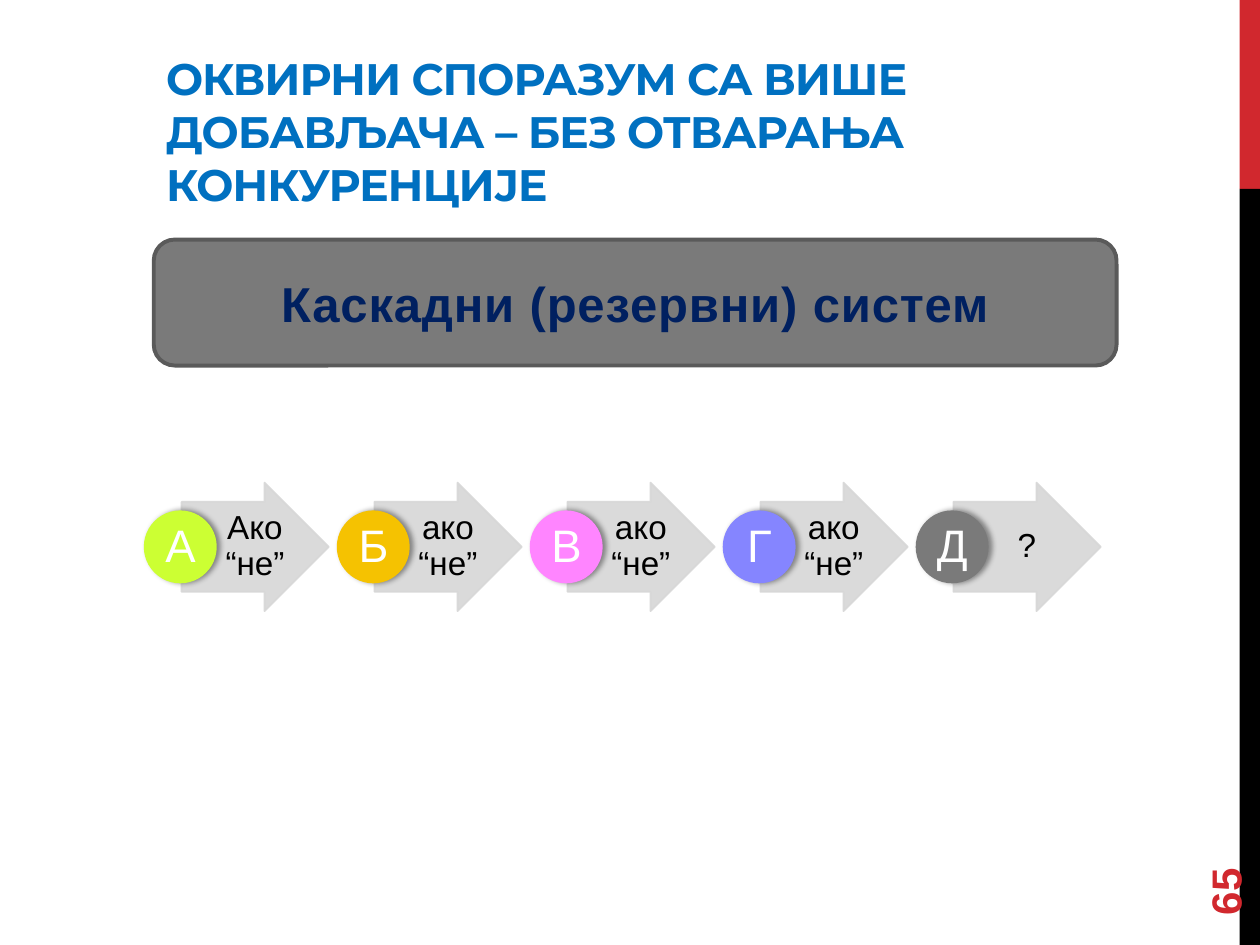
from dataclasses import dataclass
from typing import Optional

from lxml.etree import SubElement
from pptx import Presentation
from pptx.dml.color import RGBColor
from pptx.enum.shapes import MSO_SHAPE as Preset
from pptx.enum.text import MSO_ANCHOR as Anchor, PP_ALIGN as Align
from pptx.oxml.ns import qn
from pptx.util import Cm, Pt


@dataclass(frozen=True)
class Theme:
    red: str = "D1282E"
    black: str = "000000"
    white: str = "FFFFFF"
    blue: str = "0070C0"
    navy: str = "002060"
    gray: str = "7A7A7A"
    dark_gray: str = "5A5A5A"
    arrow: str = "D7D7D7"
    body_font: str = "Arial"
    title_font: str = "Montserrat"
    title_size: float = 25.2
    banner_size: float = 28
    letter_size: float = 26
    page_size: float = 24
    label_size: float = 19


THEME = Theme()


@dataclass(frozen=True)
class Box:
    """Left, top, width and height in centimetres."""
    left: float
    top: float
    width: float
    height: float

    def shifted(self, dx: float) -> "Box":
        return Box(self.left + dx, self.top, self.width, self.height)

    def lengths(self) -> tuple:
        return Cm(self.left), Cm(self.top), Cm(self.width), Cm(self.height)


@dataclass(frozen=True)
class Style:
    size: float
    color: str
    font: str = THEME.body_font
    bold: bool = False
    spacing: float = 0
    align: Align = Align.LEFT
    anchor: Anchor = Anchor.MIDDLE
    line_spacing: float = 1.0
    insets: tuple = (0.25, 0.13, 0.25, 0.13)


@dataclass(frozen=True)
class Supplier:
    letter: str
    color: str
    condition: str


SUPPLIERS = (
    Supplier("A", "CCFF33", "Ако “нe”"),
    Supplier("Б", "F5C201", "ако “не”"),
    Supplier("В", "FF85FF", "ако “не”"),
    Supplier("Г", "8585FF", "ако “не”"),
    Supplier("Д", THEME.gray, "?"),
)
STEP_PITCH = 3.89
ARROW = Box(3.66, 9.73, 2.97, 2.59)
CONDITION = Box(4.39, 10.13, 1.45, 1.8)
CIRCLE = Box(2.9, 10.29, 1.47, 1.47)
LETTER = Box(3.12, 10.52, 1.04, 1.04)

TITLE_STYLE = Style(THEME.title_size, THEME.blue, THEME.title_font, bold=True,
                    spacing=-0.6, anchor=Anchor.TOP)
PAGE_STYLE = Style(THEME.page_size, THEME.red, bold=True)
BANNER_STYLE = Style(THEME.banner_size, THEME.navy, bold=True, spacing=0.5,
                     align=Align.CENTER)
CONDITION_STYLE = Style(THEME.label_size, THEME.black, align=Align.CENTER,
                        line_spacing=0.9, insets=(0.13, 0.03, 0.08, 0.03))
LETTER_STYLE = Style(THEME.letter_size, THEME.white, align=Align.CENTER,
                     line_spacing=0.9, insets=(0.05,) * 4)


def write(shape, text: str, style: Style) -> None:
    frame = shape.text_frame
    frame.word_wrap = True
    frame.vertical_anchor = style.anchor
    (frame.margin_left, frame.margin_top,
     frame.margin_right, frame.margin_bottom) = map(Cm, style.insets)
    paragraph = frame.paragraphs[0]
    paragraph.alignment = style.align
    paragraph.line_spacing = style.line_spacing
    run = paragraph.add_run()
    run.text = text
    run.font.name = style.font
    run.font.size = Pt(style.size)
    run.font.bold = style.bold
    run.font.color.rgb = RGBColor.from_string(style.color)
    if style.spacing:
        run._r.get_or_add_rPr().set("spc", str(round(style.spacing * 100)))


def add_text(shapes, box: Box, text: str, style: Style):
    text_box = shapes.add_textbox(*box.lengths())
    write(text_box, text, style)
    return text_box


def add_solid(shapes, preset: Preset, box: Box, fill: str,
              line: Optional[str] = None, line_width: float = 1):
    shape = shapes.add_shape(preset, *box.lengths())
    shape.shadow.inherit = False
    shape.fill.solid()
    shape.fill.fore_color.rgb = RGBColor.from_string(fill)
    if line:
        shape.line.color.rgb = RGBColor.from_string(line)
        shape.line.width = Pt(line_width)
    else:
        shape.line.fill.background()
    return shape


def add_alpha(color, percent: int) -> None:
    SubElement(color, qn("a:alpha")).set("val", str(percent * 1000))


def add_right_shadow(shape) -> None:
    effects = shape._element.spPr.find(qn("a:effectLst"))
    shadow = SubElement(effects, qn("a:outerShdw"), blurRad=str(Pt(3.1)),
                        dist=str(Pt(1.8)), dir="0", rotWithShape="0")
    color = SubElement(shadow, qn("a:srgbClr"), val=THEME.black)
    add_alpha(color, 40)


def add_step(shapes, supplier: Supplier, dx: float) -> None:
    arrow = add_solid(shapes, Preset.RIGHT_ARROW, ARROW.shifted(dx),
                      THEME.arrow, THEME.arrow)
    arrow.adjustments[0] = 0.7
    arrow.adjustments[1] = 0.5
    for color in arrow._element.spPr.findall(".//" + qn("a:srgbClr")):
        add_alpha(color, 90)
    add_text(shapes, CONDITION.shifted(dx), supplier.condition, CONDITION_STYLE)
    circle = add_solid(shapes, Preset.OVAL, CIRCLE.shifted(dx), supplier.color)
    add_right_shadow(circle)
    add_text(shapes, LETTER.shifted(dx), supplier.letter, LETTER_STYLE)


def main() -> None:
    deck = Presentation()
    deck.slide_width, deck.slide_height = Cm(25.4), Cm(19.05)
    shapes = deck.slides.add_slide(deck.slide_layouts[6]).shapes

    add_solid(shapes, Preset.RECTANGLE, Box(24.99, 0, 0.41, 3.81), THEME.red)
    add_solid(shapes, Preset.RECTANGLE, Box(24.99, 3.81, 0.41, 15.24), THEME.black)
    add_text(shapes, Box(3.1, 0.91, 20.07, 3.38),
             "ОКВИРНИ СПОРАЗУМ СА ВИШЕ ДОБАВЉАЧА – БЕЗ ОТВАРАЊА КОНКУРЕНЦИЈЕ",
             TITLE_STYLE)
    page_number = add_text(shapes, Box(22.86, 16.36, 3.66, 1.02), "65", PAGE_STYLE)
    page_number.rotation = 270

    cascade = shapes.add_group_shape().shapes
    for index, supplier in enumerate(SUPPLIERS):
        add_step(cascade, supplier, index * STEP_PITCH)

    banner = add_solid(shapes, Preset.ROUNDED_RECTANGLE, Box(3.1, 4.83, 19.41, 2.54),
                       THEME.gray, THEME.dark_gray, 2.25)
    write(banner, "Каскадни (резервни) систем", BANNER_STYLE)
    deck.save("out.pptx")


if __name__ == "__main__":
    main()
